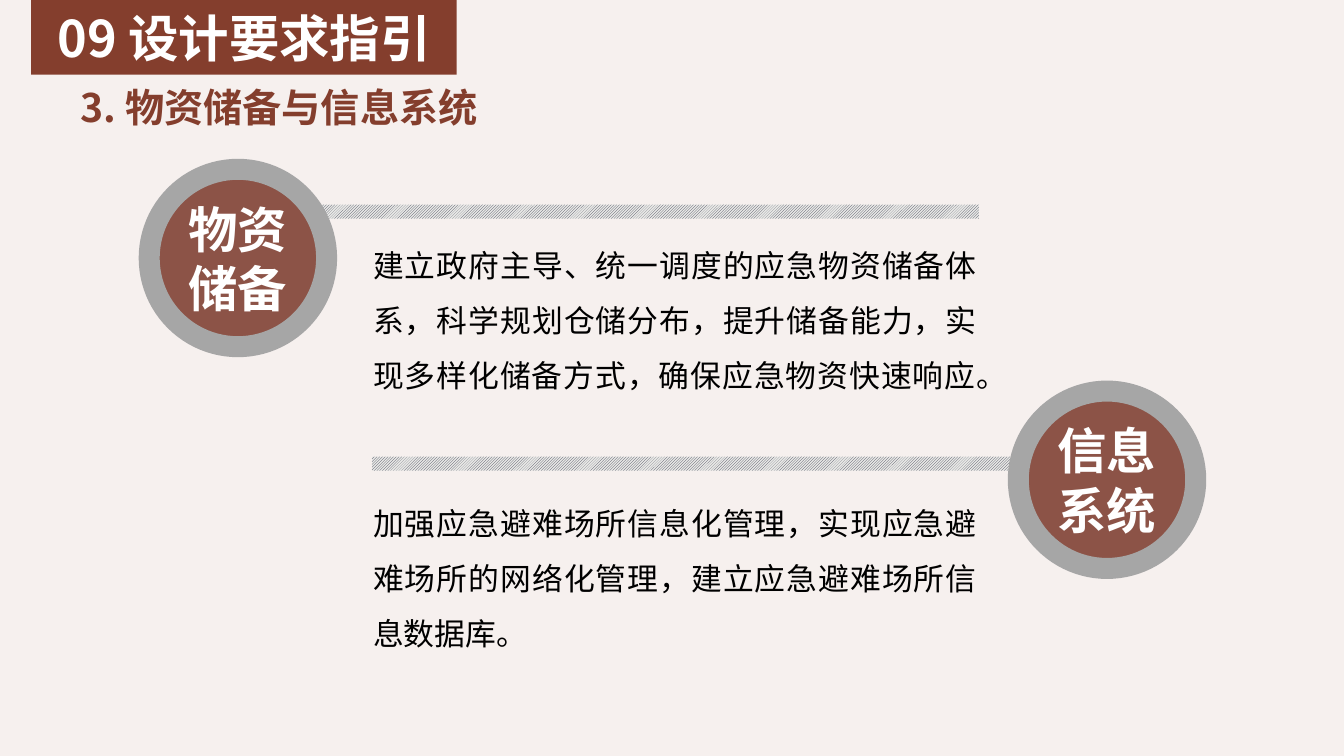
from lxml import etree
from pptx import Presentation
from pptx import util as u
from pptx.dml.color import RGBColor
from pptx.enum import dml, shapes, text
from pptx.oxml.ns import qn

CREAM = RGBColor(0xF6, 0xF0, 0xEE)
RUST = RGBColor(0x84, 0x3E, 0x2D)
CLAY = RGBColor(0x8C, 0x53, 0x47)
RING = RGBColor(0xA6, 0xA6, 0xA6)
HATCH = RGBColor(0x41, 0x44, 0x55)
HATCH_BACK = RGBColor(0xE8, 0xE8, 0xE6)
WHITE = RGBColor(0xFF, 0xFF, 0xFF)
BLACK = RGBColor(0, 0, 0)


class Board:
    """Draws styled elements on one slide, with 100 px to the inch."""

    FONT = "Noto Sans CJK SC"
    SCALE = 9144

    def __init__(self, slide):
        self.slide = slide

    def box(self, *lengths):
        return [u.Emu(length * self.SCALE) for length in lengths]

    def shape(self, kind, *place):
        item = self.slide.shapes.add_shape(kind, *self.box(*place))
        item.shadow.inherit = False
        item.line.fill.background()
        return item

    def panel(self, colour, *place):
        item = self.shape(shapes.MSO_SHAPE.RECTANGLE, *place)
        item.fill.solid()
        item.fill.fore_color.rgb = colour
        return item

    def label(self, item, words, size, colour, bold, align, insets=(10, 5)):
        frame = item.text_frame
        frame.word_wrap = True
        side, edge = self.box(*insets)
        frame.margin_left = frame.margin_right = side
        frame.margin_top = frame.margin_bottom = edge
        paragraph = frame.paragraphs[0]
        paragraph.text = words
        paragraph.alignment = align
        font = paragraph.font
        font.size, font.bold, font.name = u.Pt(size), bold, self.FONT
        font.color.rgb = colour
        properties = paragraph._p.pPr.find(qn("a:defRPr"))
        etree.SubElement(properties, qn("a:ea"), typeface=self.FONT)
        return paragraph

    def banner(self, words, *place):
        item = self.panel(RUST, *place)
        item.text_frame.vertical_anchor = text.MSO_ANCHOR.MIDDLE
        self.label(item, words, 36, WHITE, True, text.PP_ALIGN.CENTER)

    def heading(self, words, *place):
        item = self.slide.shapes.add_textbox(*self.box(*place))
        paragraph = self.label(item, words, 28, RUST, True, text.PP_ALIGN.JUSTIFY)
        paragraph.line_spacing = u.Pt(28)
        paragraph.space_after = u.Pt(6)
        properties = paragraph._p.get_or_add_pPr()
        properties.set("marL", "0")
        properties.set("indent", str(39 * self.SCALE))

    def bar(self, *place):
        item = self.shape(shapes.MSO_SHAPE.RECTANGLE, *place)
        item.fill.patterned()
        item.fill.pattern = dml.MSO_PATTERN.LIGHT_UPWARD_DIAGONAL
        item.fill.fore_color.rgb = HATCH
        item.fill.back_color.rgb = HATCH_BACK

    def badge(self, words, left, top):
        item = self.shape(shapes.MSO_SHAPE.OVAL, left, top, 176, 176)
        item.fill.solid()
        item.fill.fore_color.rgb = CLAY
        item.line.color.rgb = RING
        item.line.width = u.Pt(15)
        item.text_frame.vertical_anchor = text.MSO_ANCHOR.MIDDLE
        self.label(item, words, 35.3, WHITE, True, text.PP_ALIGN.CENTER, (13, 6))

    def body(self, words, *place):
        item = self.slide.shapes.add_textbox(*self.box(*place))
        paragraph = self.label(item, words, 22, BLACK, False, text.PP_ALIGN.JUSTIFY, (13, 6))
        paragraph.line_spacing = 1.5


TOPICS = [
    ("物资储备", 148, 168, 308, 203, 220,
     "建立政府主导、统一调度的应急物资储备体系，科学规划仓储分布，提升储备能力，"
     "实现多样化储备方式，确保应急物资快速响应。"),
    ("信息系统", 1010, 388, 369, 453, 476,
     "加强应急避难场所信息化管理，实现应急避难场所的网络化管理，"
     "建立应急避难场所信息数据库。"),
]


def main():
    deck = Presentation()
    deck.slide_width, deck.slide_height = u.Inches(13.33), u.Inches(7.5)
    board = Board(deck.slides.add_slide(deck.slide_layouts[6]))
    board.panel(CREAM, 0, 0, 1333, 750)
    board.banner("09 设计要求指引", 31, 0, 422, 74)
    board.heading("3. 物资储备与信息系统", 31, 86, 501, 49)
    for topic, badge_left, badge_top, bar_left, bar_top, body_top, words in TOPICS:
        board.bar(bar_left, bar_top, 663, 14)
        board.badge(topic, badge_left, badge_top)
        board.body(words, 357, body_top, 625, 173)
    deck.save("out.pptx")


if __name__ == "__main__":
    main()
